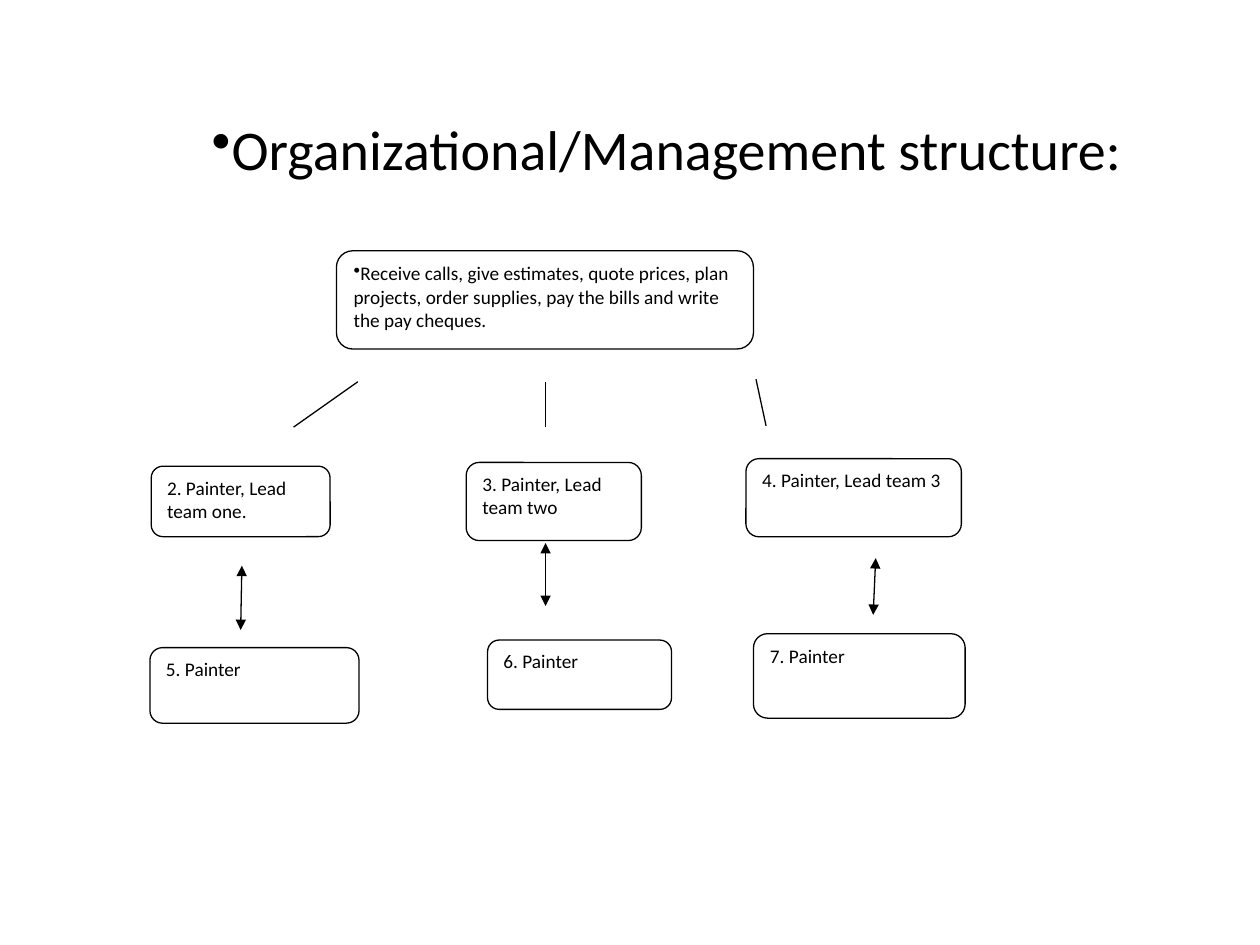
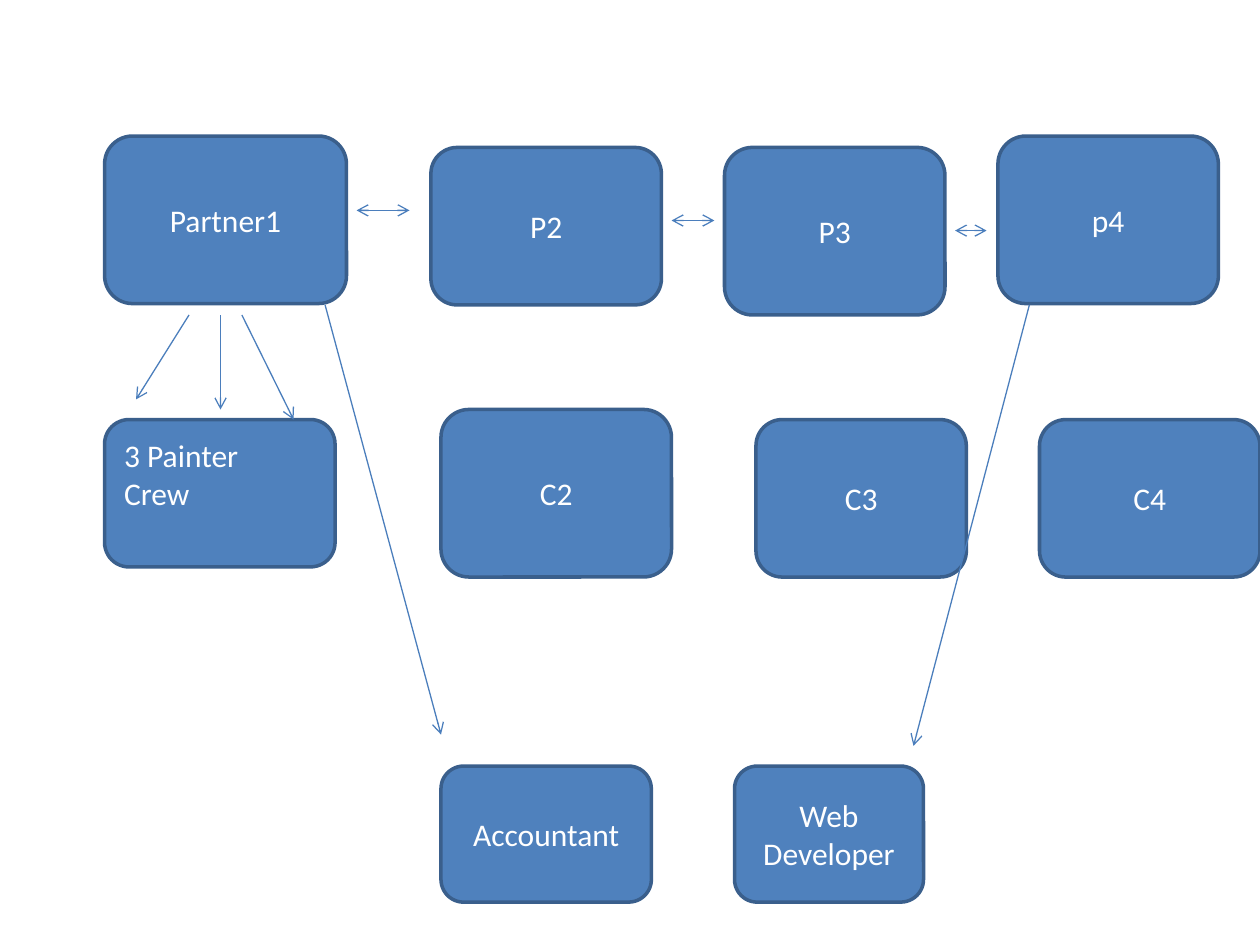
"""Build two organisation charts: the team structure and the partner network."""
from collections import namedtuple

from lxml.etree import SubElement
from pptx import Presentation
from pptx.dml.color import RGBColor
from pptx.enum.shapes import MSO_CONNECTOR, MSO_SHAPE
from pptx.enum.text import MSO_ANCHOR, PP_ALIGN
from pptx.oxml.ns import qn
from pptx.util import Inches, Pt

BLACK = RGBColor(0x00, 0x00, 0x00)
WHITE = RGBColor(0xFF, 0xFF, 0xFF)
BLUE = RGBColor(0x4F, 0x81, 0xBD)
DARK_BLUE = RGBColor(0x3A, 0x5F, 0x8C)
LINK_BLUE = RGBColor(0x4B, 0x7E, 0xBC)
FONT = "Calibri"

Look = namedtuple("Look", "fill outline outline_width ink size align anchor link arrow")
OUTLINED = Look(WHITE, BLACK, 0.75, BLACK, 11, PP_ALIGN.LEFT, MSO_ANCHOR.TOP, BLACK, "triangle")
SOLID = Look(BLUE, DARK_BLUE, 2, WHITE, 18, PP_ALIGN.CENTER, MSO_ANCHOR.MIDDLE, LINK_BLUE, "arrow")

HEADING = "Organizational/Management structure:"
HEADING_AREA = (1.58, 0.86, 7.75, 0.94)

MANAGER = (
    "Receive calls, give estimates, quote prices, plan projects, "
    "order supplies, pay the bills and write the pay cheques.",
    (2.67, 1.99, 3.31, 0.78),
)
PAINTERS = [
    ("2. Painter, Lead team one.", (1.2, 3.7, 1.42, 0.56)),
    ("3. Painter, Lead team two", (3.7, 3.67, 1.39, 0.62)),
    ("4. Painter, Lead team 3", (5.92, 3.64, 1.71, 0.62)),
    ("5. Painter", (1.19, 5.14, 1.66, 0.6)),
    ("6. Painter", (3.87, 5.08, 1.46, 0.55)),
    ("7. Painter", (5.98, 5.03, 1.68, 0.67)),
]
MANAGER_TO_LEADS = [
    ((2.84, 3.03), (2.33, 3.39)),
    ((6, 3.01), (6.08, 3.38)),
    ((4.33, 3.03), (4.33, 3.39)),
]
LEADS_WITH_PAINTERS = [
    ((1.91, 5), (1.92, 4.49)),
    ((4.33, 4.81), (4.33, 4.31)),
    ((6.93, 4.88), (6.95, 4.43)),
]

PARTNERS_AND_SUPPORT = [
    ("Partner1", (0.83, 1.08, 1.92, 1.33)),
    ("P2", (3.42, 1.17, 1.83, 1.25)),
    ("P3", (5.75, 1.17, 1.75, 1.33)),
    ("p4", (7.92, 1.08, 1.75, 1.33)),
    ("C2", (3.5, 3.25, 1.83, 1.33)),
    ("C3", (6, 3.33, 1.67, 1.25)),
    ("C4", (8.25, 3.33, 1.75, 1.25)),
    ("Accountant", (3.5, 6.08, 1.67, 1.08)),
    ("Web Developer", (5.83, 6.08, 1.5, 1.08)),
]
CREW = ("3 Painter\nCrew", (0.83, 3.33, 1.83, 1.17))
BETWEEN_PARTNERS = [
    ((2.83, 1.67), (3.25, 1.67)),
    ((5.33, 1.75), (5.67, 1.75)),
    ((7.58, 1.83), (7.83, 1.83)),
]
PARTNERS_TO_STAFF = [
    ((1.5, 2.5), (1.08, 3.17)),
    ((1.92, 2.5), (2.33, 3.33)),
    ((1.75, 2.5), (1.75, 3.25)),
    ((2.58, 2.42), (3.5, 5.83)),
    ((8.17, 2.42), (7.25, 5.92)),
]


def write(frame, text, size, ink, align, anchor):
    frame.text = text
    frame.word_wrap = True
    frame.vertical_anchor = anchor
    for paragraph in frame.paragraphs:
        paragraph.alignment = align
        for run in paragraph.runs:
            run.font.name = FONT
            run.font.size = Pt(size)
            run.font.color.rgb = ink


def add_bullet(frame):
    properties = frame.paragraphs[0].runs[0].font and frame.paragraphs[0]._p.get_or_add_pPr()
    properties.set("marL", "0")
    properties.set("indent", "0")
    SubElement(properties, qn("a:buChar"), char="•")


def add_role(slide, role, look):
    text, area = role
    box = slide.shapes.add_shape(MSO_SHAPE.ROUNDED_RECTANGLE, *map(Inches, area))
    box.shadow.inherit = False
    box.fill.solid()
    box.fill.fore_color.rgb = look.fill
    box.line.color.rgb = look.outline
    box.line.width = Pt(look.outline_width)
    write(box.text_frame, text, look.size, look.ink, look.align, look.anchor)
    return box.text_frame


def add_links(slide, links, look, ends=()):
    for start, finish in links:
        link = slide.shapes.add_connector(
            MSO_CONNECTOR.STRAIGHT, *map(Inches, start + finish))
        link.line.color.rgb = look.link
        link.line.width = Pt(0.75)
        properties = link.element.spPr
        outline = properties.find(qn("a:ln"))
        for end in ends:
            SubElement(outline, qn(f"a:{end}"), type=look.arrow)
        SubElement(properties, qn("a:effectLst"))


def build_structure(deck):
    slide = deck.slides.add_slide(deck.slide_layouts[5])
    heading = slide.shapes.title
    heading.left, heading.top, heading.width, heading.height = map(Inches, HEADING_AREA)
    write(heading.text_frame, HEADING, 32, BLACK, PP_ALIGN.LEFT, MSO_ANCHOR.TOP)
    add_bullet(heading.text_frame)
    add_bullet(add_role(slide, MANAGER, OUTLINED))
    for painter in PAINTERS:
        add_role(slide, painter, OUTLINED)
    add_links(slide, MANAGER_TO_LEADS, OUTLINED)
    add_links(slide, LEADS_WITH_PAINTERS, OUTLINED, ("headEnd", "tailEnd"))


def build_partners(deck):
    slide = deck.slides.add_slide(deck.slide_layouts[6])
    for role in PARTNERS_AND_SUPPORT:
        add_role(slide, role, SOLID)
    crew = add_role(slide, CREW, SOLID._replace(align=PP_ALIGN.LEFT))
    crew.margin_bottom = Inches(0.35)
    add_links(slide, BETWEEN_PARTNERS, SOLID, ("headEnd", "tailEnd"))
    add_links(slide, PARTNERS_TO_STAFF, SOLID, ("tailEnd",))


def main():
    deck = Presentation()
    deck.slide_width, deck.slide_height = Inches(10), Inches(7.5)
    build_structure(deck)
    build_partners(deck)
    deck.save("out.pptx")


if __name__ == "__main__":
    main()
